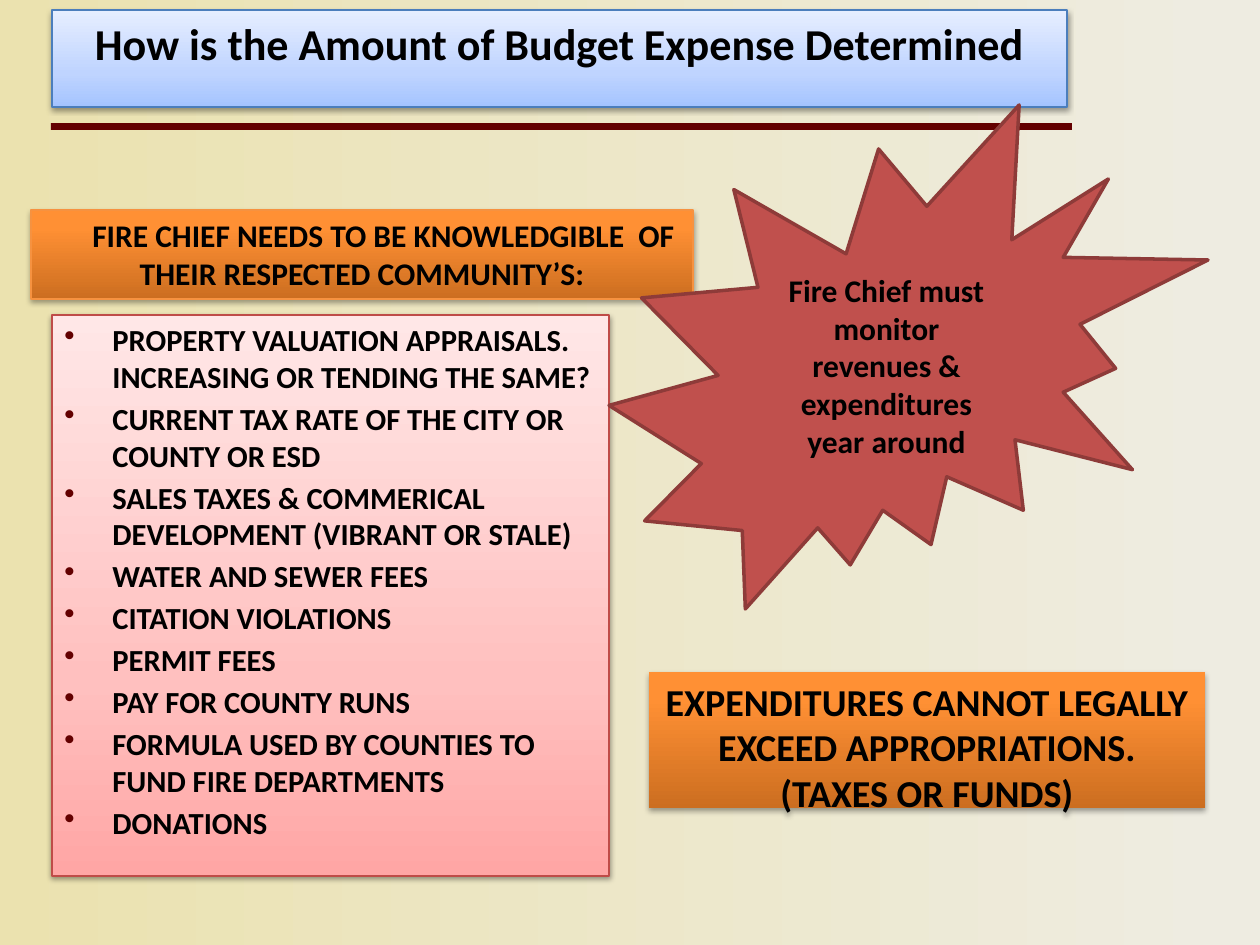
import pptx
import pptx.util
import pptx.dml.color
import pptx.enum.shapes
import pptx.enum.text
import pptx.oxml
import pptx.oxml.ns

SCALE = 914400 / 126
SHAPE = pptx.enum.shapes.MSO_SHAPE
ALIGN = pptx.enum.text.PP_ALIGN
ANCHOR = pptx.enum.text.MSO_ANCHOR
NAMESPACE = pptx.oxml.ns.nsdecls("a")

BLUE = [(0, "A4C4FF"), (35, "BFD4FF"), (100, "E6EEFF")]
PINK = [(0, "FFA6A5"), (35, "FFC0BF"), (100, "FFE7E7")]
ORANGE = [(0, "CC6E20"), (80, "FF9034"), (100, "FF9136")]
CREAM = [(0, "EBE2AF"), (97, "EEECE1")]
MAROON = "630000"

REVENUE_SOURCES = [
    "PROPERTY VALUATION APPRAISALS. INCREASING OR TENDING THE SAME?",
    "CURRENT TAX RATE OF THE CITY OR COUNTY OR ESD",
    "SALES TAXES & COMMERICAL DEVELOPMENT (VIBRANT OR STALE)",
    "WATER AND SEWER FEES",
    "CITATION VIOLATIONS",
    "PERMIT FEES",
    "PAY FOR COUNTY RUNS",
    "FORMULA USED BY COUNTIES TO FUND FIRE DEPARTMENTS",
    "DONATIONS",
]


def px(length):
    return pptx.util.Emu(round(length * SCALE))


def color(value):
    return pptx.dml.color.RGBColor.from_string(value)


def element(xml):
    return pptx.oxml.parse_xml(xml)


class BudgetSlide:
    font = "Calibri"
    ink = "000000"

    def __init__(self, deck):
        self.slide = deck.slides.add_slide(deck.slide_layouts[6])

    def gradient(self, fill, owner, stops, angle):
        fill.gradient()
        old = owner.xpath(".//a:gradFill")[0]
        marks = "".join(
            f'<a:gs pos="{position * 1000}"><a:srgbClr val="{value}"/></a:gs>'
            for position, value in stops
        )
        new = element(
            f'<a:gradFill {NAMESPACE} rotWithShape="1"><a:gsLst>{marks}</a:gsLst>'
            f'<a:lin ang="{angle * 60000}" scaled="0"/></a:gradFill>'
        )
        old.getparent().replace(old, new)

    def background(self, stops):
        fill = self.slide.background.fill
        self.gradient(fill, self.slide.element, stops, 0)

    def shape(self, kind, left, top, width, height, fill, line=None, weight=0.75):
        shape = self.slide.shapes.add_shape(
            kind, px(left), px(top), px(width), px(height)
        )
        shape.shadow.inherit = False
        if isinstance(fill, str):
            shape.fill.solid()
            shape.fill.fore_color.rgb = color(fill)
        else:
            self.gradient(shape.fill, shape.element, fill, 270)
        if line:
            shape.line.color.rgb = color(line)
            shape.line.width = pptx.util.Pt(weight)
        else:
            shape.line.fill.background()
        return shape

    def panel(self, left, top, width, height, stops, line=None, opacity=35):
        panel = self.shape(SHAPE.RECTANGLE, left, top, width, height, stops, line)
        effects = panel.element.spPr.find(pptx.oxml.ns.qn("a:effectLst"))
        effects.append(element(
            f'<a:outerShdw {NAMESPACE} blurRad="40000" dist="20000" dir="5400000" '
            f'rotWithShape="0"><a:srgbClr val="000000"><a:alpha val="{opacity * 1000}"/>'
            "</a:srgbClr></a:outerShdw>"
        ))
        return panel

    def text(self, shape, lines, size, align=ALIGN.CENTER, anchor=ANCHOR.TOP,
             bullet=None, indent=0):
        frame = shape.text_frame
        frame.word_wrap = True
        frame.vertical_anchor = anchor
        frame.text = "\n".join(lines)
        for number, para in enumerate(frame.paragraphs):
            para.alignment = align
            if number:
                para.space_before = pptx.util.Pt(3)
            properties = para._p.get_or_add_pPr()
            if bullet:
                properties.set("marL", str(px(48)))
                properties.set("indent", str(px(-48)))
                properties.append(element(
                    f'<a:buClr {NAMESPACE}><a:srgbClr val="{bullet}"/></a:buClr>'
                ))
                properties.append(element(f'<a:buChar {NAMESPACE} char="•"/>'))
            elif indent:
                properties.set("indent", str(px(indent)))
            for span in para.runs:
                span.font.name = self.font
                span.font.size = pptx.util.Pt(size)
                span.font.bold = True
                span.font.color.rgb = color(self.ink)


def main():
    deck = pptx.Presentation()
    deck.slide_width, deck.slide_height = px(1260), px(945)
    page = BudgetSlide(deck)
    page.background(CREAM)
    page.shape(SHAPE.RECTANGLE, 51, 123, 1021, 7, MAROON)

    title = page.panel(52, 10, 1015, 97, BLUE, "4B7EBC", 38)
    page.text(title, ["How is the Amount of Budget Expense Determined"], 25.2)

    sources = page.panel(52, 315, 557, 561, PINK, "BF4C48", 38)
    page.text(sources, REVENUE_SOURCES, 17.5, ALIGN.LEFT, bullet=MAROON)

    limit = page.panel(649, 672, 556, 136, ORANGE)
    page.text(
        limit,
        ["EXPENDITURES CANNOT LEGALLY EXCEED APPROPRIATIONS. (TAXES OR FUNDS)"],
        21.7,
    )

    heading = page.panel(31, 210, 662, 89, ORANGE, "F69240")
    page.text(
        heading,
        ["FIRE CHIEF NEEDS TO BE KNOWLEDGIBLE  OF THEIR RESPECTED COMMUNITY’S:"],
        18,
        indent=43,
    )

    burst = page.shape(
        SHAPE.EXPLOSION2, 609, 105, 599, 504, "C0504D", "8E3B39", 2
    )
    page.text(
        burst,
        ["Fire Chief must monitor revenues & expenditures year around"],
        18,
        anchor=ANCHOR.MIDDLE,
    )
    deck.save("out.pptx")


if __name__ == "__main__":
    main()
